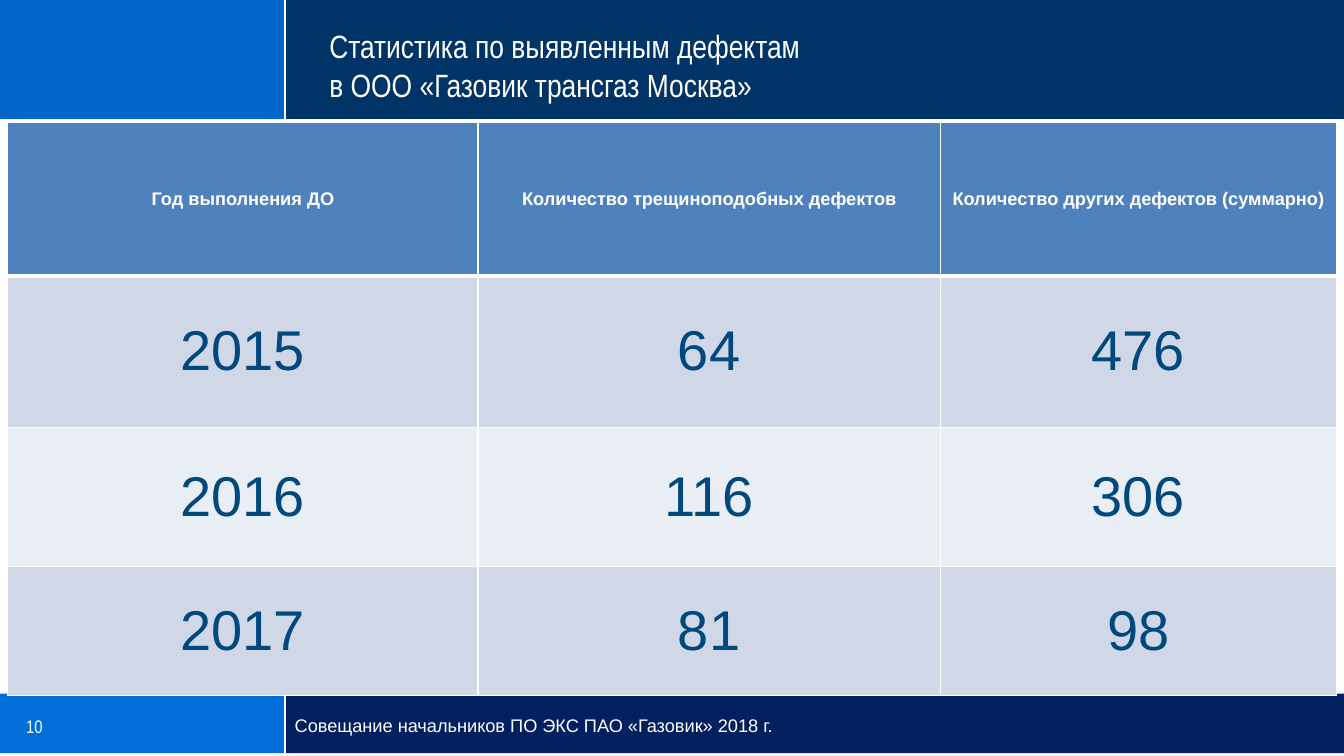
"""Builds the slide with yearly defect statistics."""
from lxml import etree
from pptx import Presentation
from pptx.dml.color import RGBColor
from pptx.enum.shapes import MSO_CONNECTOR, MSO_SHAPE
from pptx.enum.text import MSO_ANCHOR, MSO_AUTO_SIZE, PP_ALIGN
from pptx.oxml.ns import qn
from pptx.util import Pt

RECTANGLE = MSO_SHAPE.RECTANGLE
STRAIGHT = MSO_CONNECTOR.STRAIGHT
MIDDLE = MSO_ANCHOR.MIDDLE
TOP = MSO_ANCHOR.TOP
NO_AUTOFIT = MSO_AUTO_SIZE.NONE
LEFT = PP_ALIGN.LEFT
CENTER = PP_ALIGN.CENTER

COLORS = {
    "white": "FFFFFF",
    "top_left": "0066CC",
    "top_right": "003366",
    "bottom_left": "006DDA",
    "bottom_right": "002060",
    "header": "4F81BD",
    "odd_row": "D0D8E8",
    "even_row": "E9EDF4",
    "number": "00487E",
}
SLIDE_WIDTH, SLIDE_HEIGHT = 960, 540
DIVIDER = 203.4
COLUMN_WIDTHS = (336, 330.2, 282.8)
ROW_HEIGHTS = (109.4, 108, 99.4, 92)
DEFECTS = (
    ("Год выполнения ДО", "Количество трещиноподобных дефектов",
     "Количество других дефектов (суммарно)"),
    ("2015", "64", "476"),
    ("2016", "116", "306"),
    ("2017", "81", "98"),
)


def color(name):
    return RGBColor.from_string(COLORS[name])


def write_text(frame, text, size, font, color_name, align=LEFT, bold=False):
    frame.text = text
    for para in frame.paragraphs:
        para.alignment = align
        for span in para.runs:
            span.font.size = Pt(size)
            span.font.name = font
            span.font.bold = bold
            span.font.color.rgb = color(color_name)


def place_text(box, text, size, font, anchor):
    frame = box.text_frame
    frame.word_wrap = True
    frame.auto_size = NO_AUTOFIT
    frame.vertical_anchor = anchor
    write_text(frame, text, size, font, "white")


def add_label(page, left, top, width, height, text, font):
    box = page.shapes.add_textbox(Pt(left), Pt(top), Pt(width), Pt(height))
    place_text(box, text, 13, font, TOP)


def add_block(page, left, top, width, height, color_name):
    block = page.shapes.add_shape(RECTANGLE, Pt(left), Pt(top), Pt(width), Pt(height))
    block.shadow.inherit = False
    block.fill.solid()
    block.fill.fore_color.rgb = color(color_name)
    block.line.fill.background()


def add_band(page, top, height, left_color, right_color):
    add_block(page, 0, top, DIVIDER, height, left_color)
    add_block(page, DIVIDER, top, SLIDE_WIDTH - DIVIDER, height, right_color)
    line = page.shapes.add_connector(
        STRAIGHT, Pt(DIVIDER), Pt(top), Pt(DIVIDER), Pt(top + height))
    line.line.color.rgb = color("white")
    line.line.width = Pt(1.25)
    etree.SubElement(line.element.spPr, qn("a:effectLst"))


def set_borders(cell, top_width, bottom_width):
    properties = cell._tc.get_or_add_tcPr()
    widths = {"a:lnL": 1, "a:lnR": 1, "a:lnT": top_width, "a:lnB": bottom_width}
    for position, (tag, width) in enumerate(widths.items()):
        border = etree.Element(qn(tag), w=str(Pt(width)))
        fill = etree.SubElement(border, qn("a:solidFill"))
        etree.SubElement(fill, qn("a:srgbClr"), val=COLORS["white"])
        properties.insert(position, border)


def add_defect_table(page):
    table = page.shapes.add_table(
        len(ROW_HEIGHTS), len(COLUMN_WIDTHS), Pt(5.4), Pt(87.8),
        Pt(sum(COLUMN_WIDTHS)), Pt(sum(ROW_HEIGHTS))).table
    for column, width in zip(table.columns, COLUMN_WIDTHS):
        column.width = Pt(width)
    for index, (row, height, values) in enumerate(zip(table.rows, ROW_HEIGHTS, DEFECTS)):
        row.height = Pt(height)
        is_header = index == 0
        fill_name = "header" if is_header else "odd_row" if index % 2 else "even_row"
        size, text_color = (13, "white") if is_header else (40, "number")
        for cell, value in zip(row.cells, values):
            cell.vertical_anchor = MIDDLE
            cell.fill.solid()
            cell.fill.fore_color.rgb = color(fill_name)
            write_text(cell.text_frame, value, size, "Arial", text_color, CENTER, is_header)
            set_borders(cell, 3 if index == 1 else 1, 3 if is_header else 1)


def add_title(page):
    title = page.shapes.title
    title.left, title.top, title.width, title.height = Pt(228), Pt(15), Pt(567), Pt(63.4)
    place_text(title, "Статистика по выявленным дефектам\nв ООО «Газовик трансгаз Москва»",
               23, "Arial Narrow", MIDDLE)


def main():
    deck = Presentation()
    deck.slide_width, deck.slide_height = Pt(SLIDE_WIDTH), Pt(SLIDE_HEIGHT)
    page = deck.slides.add_slide(deck.slide_layouts[5])
    add_band(page, 495.4, 42.6, "bottom_left", "bottom_right")
    add_band(page, 0, 85, "top_left", "top_right")
    add_label(page, 11.5, 507.6, 190, 24, "10", "Arial Narrow")
    add_label(page, DIVIDER, 507, 714, 30,
              "Совещание начальников ПО ЭКС ПАО «Газовик» 2018 г.", "Arial")
    add_title(page)
    page.shapes._spTree.append(page.shapes.title.element)
    add_defect_table(page)
    deck.save("out.pptx")


if __name__ == "__main__":
    main()
